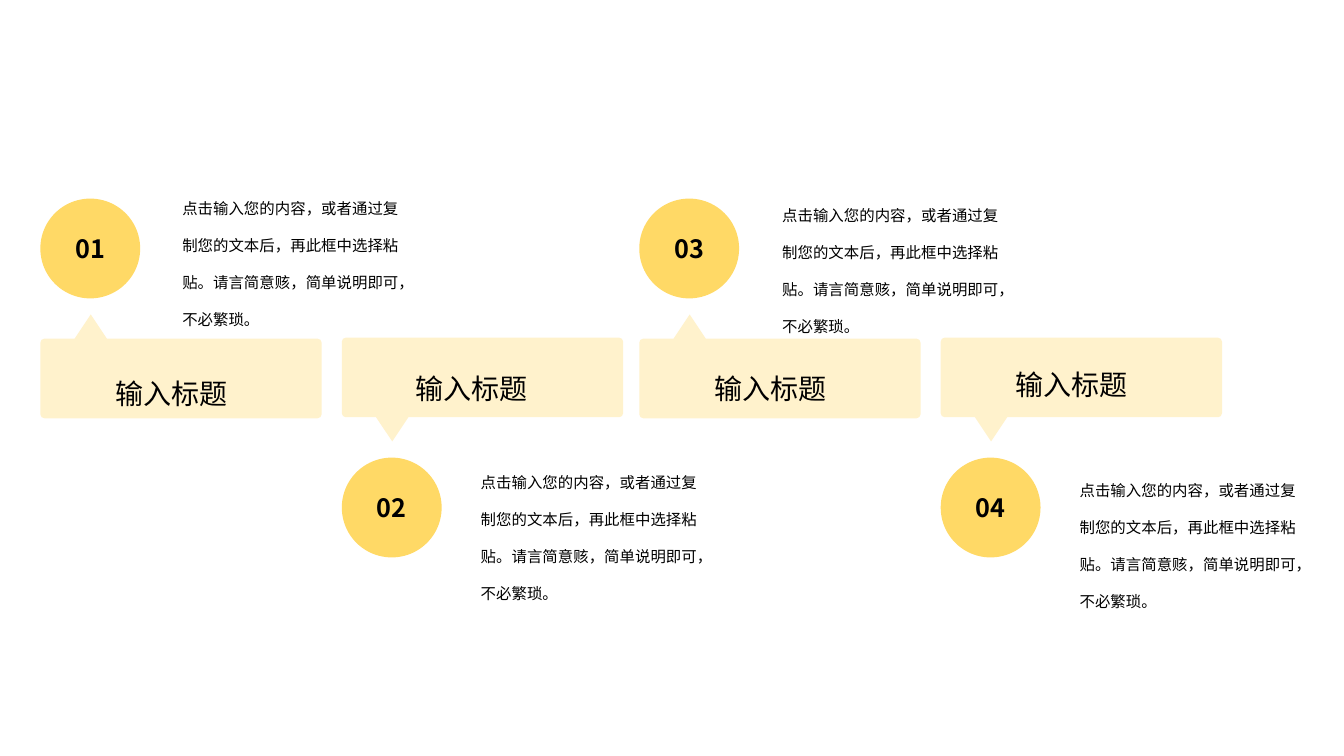
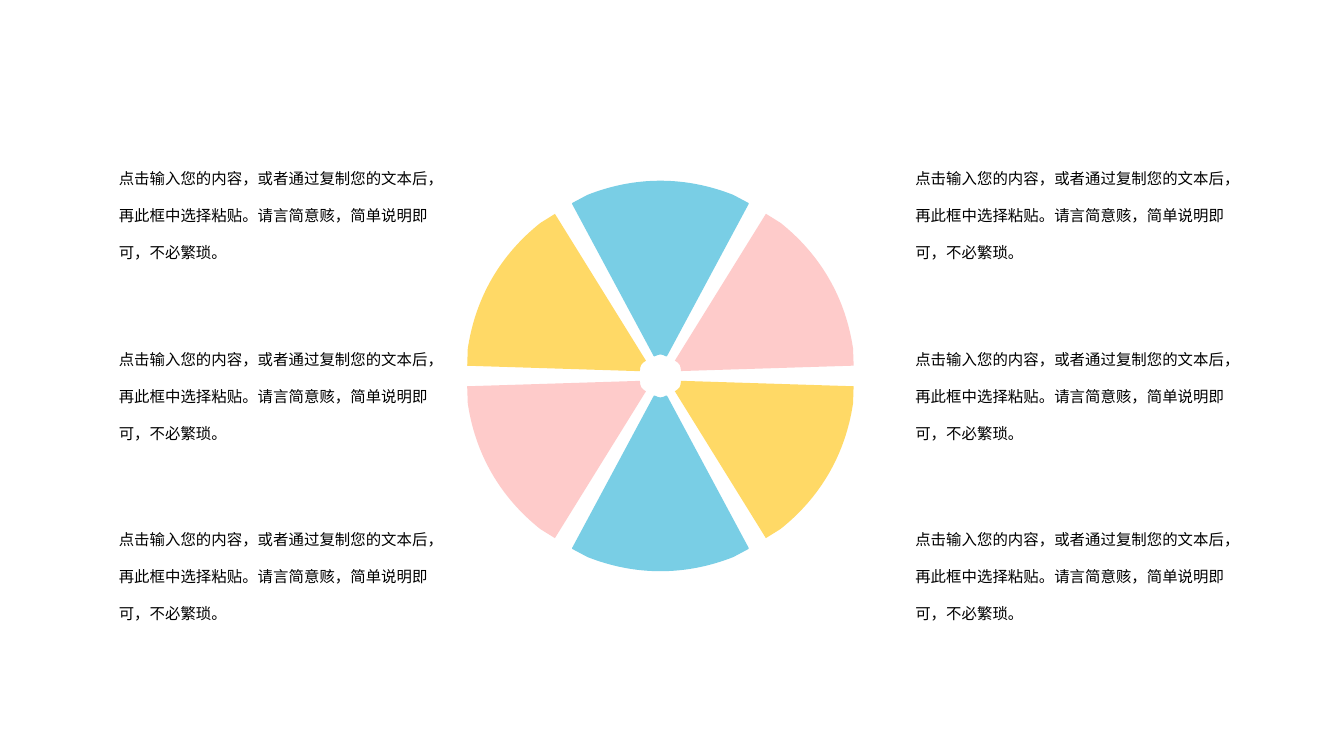
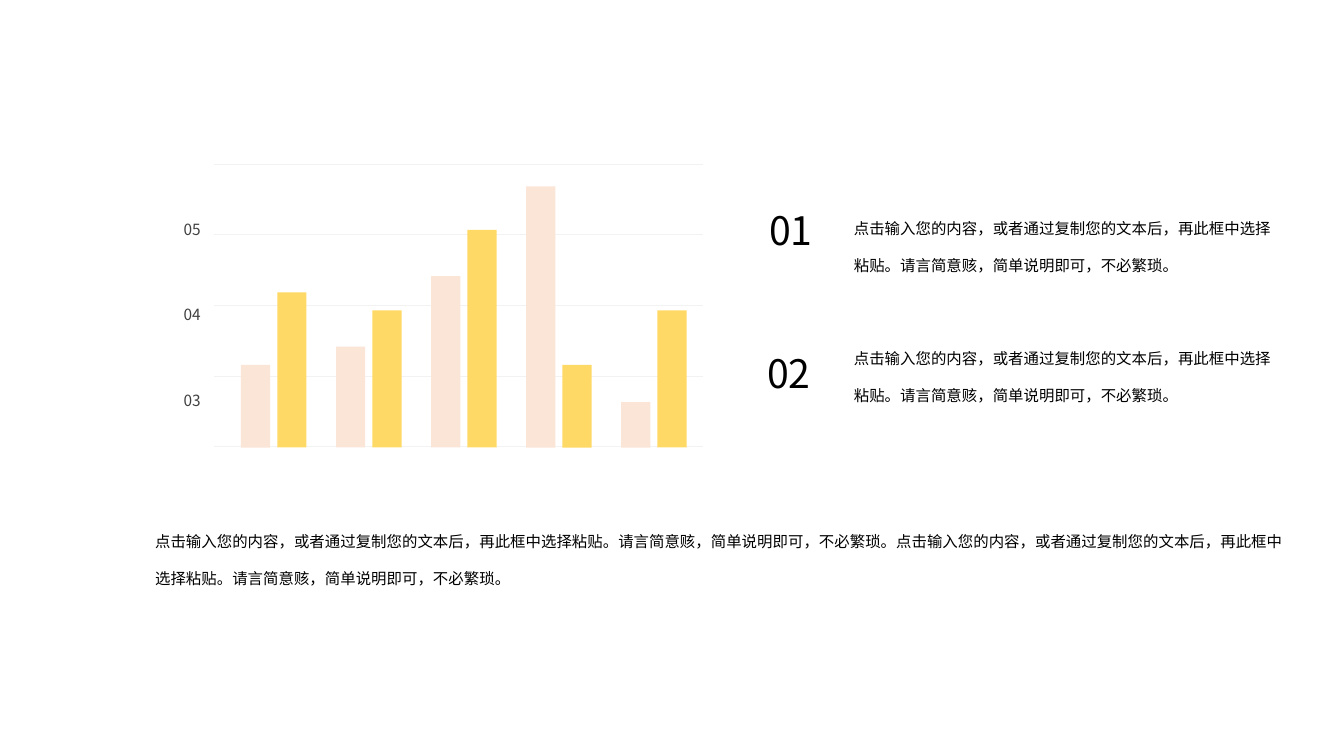
from dataclasses import dataclass
from math import cos, radians, sin

from lxml.etree import SubElement
from pptx import Presentation
from pptx.dml.color import RGBColor
from pptx.enum.shapes import MSO_CONNECTOR as Connector, MSO_SHAPE as Preset
from pptx.enum.text import MSO_ANCHOR as Anchor, MSO_AUTO_SIZE as AutoSize, PP_ALIGN as Align
from pptx.oxml.ns import qn
from pptx.presentation import Presentation as Deck
from pptx.shapes.autoshape import Shape
from pptx.shapes.shapetree import GroupShapes, SlideShapes
from pptx.slide import Slide
from pptx.text.text import TextFrame
from pptx.util import Inches, Pt

Point = tuple[float, float]
Segment = tuple[Point, ...]  # one point is a line, three are a Bezier curve
Shapes = SlideShapes | GroupShapes


@dataclass(frozen=True)
class Theme:
    font: str = "Noto Sans CJK JP"
    text: str = "000000"
    axis_text: str = "404040"
    grid: str = "F2F2F2"
    yellow: str = "FFD966"
    cream: str = "FFF2CC"
    peach: str = "FBE5D6"
    blue: str = "79CEE5"
    pink: str = "FECBCA"
    body_size: int = 11
    badge_size: int = 18
    title_size: int = 20
    number_size: int = 28


@dataclass(frozen=True)
class Step:
    number: str
    left: float
    points_up: bool
    title_at: Point
    body_at: Point


@dataclass(frozen=True)
class NumberedNote:
    number: str
    number_at: Point
    body_top: float


THEME = Theme()
BODY = "点击输入您的内容，或者通过复制您的文本后，再此框中选择粘贴。请言简意赅，简单说明即可，不必繁琐。"
TITLE = "输入标题"

STEPS = [
    Step("01", 0.4, True, (1.05, 3.35), (1.71, 1.74)),
    Step("02", 3.39, False, (4.02, 3.3), (4.67, 4.46)),
    Step("03", 6.34, True, (6.99, 3.3), (7.66, 1.81)),
    Step("04", 9.33, False, (9.97, 3.26), (10.61, 4.54)),
]
WEDGES = [
    (0, THEME.blue), (60, THEME.pink), (300, THEME.yellow),
    (120, THEME.yellow), (180, THEME.blue), (240, THEME.pink),
]
NOTES = [
    NumberedNote("01", (7.63, 2.05), 1.94),
    NumberedNote("02", (7.61, 3.47), 3.23),
]
BAR_PAIRS = [(0.82, 1.54), (1.0, 1.36), (1.7, 2.16), (2.59, 0.82), (0.45, 1.36)]


def paint(shape: Shape, color: str, outline: float = 0) -> None:
    shape.shadow.inherit = False
    shape.fill.solid()
    shape.fill.fore_color.rgb = RGBColor.from_string(color)
    if outline:
        shape.line.color.rgb = RGBColor.from_string(color)
        shape.line.width = Pt(outline)
    else:
        shape.line.fill.background()


def write(frame: TextFrame, text: str, size: int, color: str = THEME.text,
          bold: bool = False, align: Align | None = None, spacing: float | None = None) -> None:
    para = frame.paragraphs[0]
    para.alignment = align
    para.line_spacing = spacing
    span = para.add_run()
    span.text = text
    span.font.size = Pt(size)
    span.font.bold = bold
    span.font.color.rgb = RGBColor.from_string(color)
    span.font.name = THEME.font
    SubElement(span.font._element, qn("a:ea"), typeface=THEME.font)


def clear_margins(frame: TextFrame) -> None:
    frame.margin_left = frame.margin_right = frame.margin_top = frame.margin_bottom = 0


def add_text(shapes: Shapes, at: Point, width: float, height: float,
             wrap: bool = True) -> TextFrame:
    box = shapes.add_textbox(Inches(at[0]), Inches(at[1]), Inches(width), Inches(height))
    frame = box.text_frame
    frame.word_wrap = wrap
    frame.auto_size = AutoSize.SHAPE_TO_FIT_TEXT
    return frame


def add_body(page: Slide, at: Point, width: float, height: float, text: str = BODY) -> None:
    write(add_text(page.shapes, at, width, height), text, THEME.body_size, spacing=2.0)


def add_outline(shapes: Shapes, start: Point, segments: list[Segment], color: str,
                outline: float = 0) -> Shape:
    """Draw a freeform, turning each three-point segment into a real curve."""
    points = [(Inches(x), Inches(y)) for segment in segments for x, y in segment]
    builder = shapes.build_freeform(Inches(start[0]), Inches(start[1]))
    builder.add_line_segments(points, close=True)
    shape = builder.convert_to_shape()
    lines = iter(list(shape._element.iter(qn("a:lnTo"))))
    for segment in segments:
        first, *others = [next(lines) for _ in segment]
        if others:
            first.tag = qn("a:cubicBezTo")
        for other in others:
            other.getparent().remove(other)
            first.append(other[0])
    paint(shape, color, outline)
    return shape


def round_corner(start: Point, corner: Point, end: Point) -> list[Segment]:
    def toward(point: Point) -> Point:
        return tuple(p + 0.55 * (c - p) for p, c in zip(point, corner))
    return [(start,), (toward(start), toward(end), end)]


def add_callout(shapes: Shapes, left: float, points_up: bool) -> None:
    radius, tip, half_tip, tip_height = 0.04, left + 0.5, 0.16, 0.24
    top = 3.36 if points_up else 3.35
    right, bottom = left + 2.79, top + 0.79
    edge, peak = (top, top - tip_height) if points_up else (bottom, bottom + tip_height)
    pointer: list[Segment] = [((tip - half_tip, edge),), ((tip, peak),), ((tip + half_tip, edge),)]
    add_outline(shapes, (left, bottom - radius), [
        *round_corner((left, top + radius), (left, top), (left + radius, top)),
        *(pointer if points_up else []),
        *round_corner((right - radius, top), (right, top), (right, top + radius)),
        *round_corner((right, bottom - radius), (right, bottom), (right - radius, bottom)),
        *([] if points_up else reversed(pointer)),
        *round_corner((left + radius, bottom), (left, bottom), (left, bottom - radius)),
    ], THEME.cream)


def add_badge(shapes: Shapes, step: Step) -> None:
    size = Inches(0.99)
    badge_top = Inches(1.97 if step.points_up else 4.54)
    badge = shapes.add_shape(Preset.OVAL, Inches(step.left), badge_top, size, size)
    paint(badge, THEME.yellow)
    clear_margins(badge.text_frame)
    badge.text_frame.vertical_anchor = Anchor.MIDDLE
    write(badge.text_frame, step.number, THEME.badge_size, bold=True, align=Align.CENTER)


def add_wedge(shapes: Shapes, hub: Point, angle: int, color: str) -> None:
    """Draw the upright wedge above the hub, then turn it clockwise about the hub."""
    def at(x: float, y: float) -> Point:
        return hub[0] + x, hub[1] - y
    outer, inner = 1.93, 0.22
    wedge = add_outline(shapes, at(0, outer), [
        (at(0.25, outer), at(0.49, 1.88), at(0.72, 1.79)),
        (at(0.87, 1.71),),
        (at(0.06, 0.2),),
        (at(0.04, 0.21), at(0.02, inner), at(0, inner)),
        (at(-0.02, inner), at(-0.04, 0.21), at(-0.06, 0.2)),
        (at(-0.87, 1.71),),
        (at(-0.72, 1.79),),
        (at(-0.49, 1.88), at(-0.25, outer), at(0, outer)),
    ], color, outline=1 if color == THEME.blue else 0)
    distance = Inches(hub[1]) - wedge.top - wedge.height // 2
    wedge.left += round(distance * sin(radians(angle)))
    wedge.top += round(distance * (1 - cos(radians(angle))))
    wedge.rotation = angle


def add_gridline(shapes: Shapes, top: float) -> None:
    line = shapes.add_connector(
        Connector.STRAIGHT, Inches(2.12), Inches(top), Inches(6.97), Inches(top))
    line.line.color.rgb = RGBColor.from_string(THEME.grid)
    line.line.width = Pt(0.5)
    SubElement(line._element.spPr, qn("a:effectLst"))


def add_bars(shapes: Shapes) -> None:
    base, first_left, last_left, bar_pitch, bar_width = 4.44, 2.39, 6.16, 0.36, 0.29
    pair_pitch = (last_left - first_left) / (len(BAR_PAIRS) - 1)
    for row in range(5):
        add_gridline(shapes, 1.63 + 0.7 * row)
    for i, pair in enumerate(BAR_PAIRS):
        for j, (height, color) in enumerate(zip(pair, (THEME.peach, THEME.yellow))):
            bar = shapes.add_shape(
                Preset.RECTANGLE, Inches(first_left + pair_pitch * i + bar_pitch * j),
                Inches(base - height), Inches(bar_width), Inches(height))
            paint(bar, color)
    for row, label in enumerate(("03", "04", "05")):
        frame = add_text(shapes, (1.71, 3.83 - 0.85 * row), 0.38, 0.29, wrap=False)
        write(frame, label, THEME.body_size, THEME.axis_text, align=Align.RIGHT)


def build_steps(page: Slide) -> None:
    timeline = page.shapes.add_group_shape().shapes
    for step in STEPS:
        add_badge(timeline, step)
        add_callout(timeline, step.left, step.points_up)
    for step in STEPS:
        add_body(page, step.body_at, 2.46, 1.53)
    for step in STEPS:
        write(add_text(page.shapes, step.title_at, 1.48, 0.68), TITLE, THEME.title_size,
              align=Align.JUSTIFY, spacing=2.0)


def build_wheel(page: Slide) -> None:
    for angle, color in WEDGES:
        add_wedge(page.shapes, (6.55, 3.73), angle, color)
    for left in (1.08, 8.98):
        for row in range(3):
            add_body(page, (left, 1.45 + 1.79 * row), 3.28, 1.16)


def build_bars(page: Slide) -> None:
    add_bars(page.shapes.add_group_shape().shapes)
    for note in NOTES:
        frame = add_text(page.shapes, note.number_at, 0.46, 0.47, wrap=False)
        clear_margins(frame)
        write(frame, note.number, THEME.number_size)
    for note in NOTES:
        add_body(page, (8.37, note.body_top), 4.42, 0.79)
    add_body(page, (1.44, 5.05), 11.48, 1.16, BODY * 2)


def main() -> None:
    deck: Deck = Presentation()
    deck.slide_width, deck.slide_height = Inches(13.33), Inches(7.5)
    blank = deck.slide_layouts[6]
    for build in (build_steps, build_wheel, build_bars):
        build(deck.slides.add_slide(blank))
    deck.save("out.pptx")


if __name__ == "__main__":
    main()
